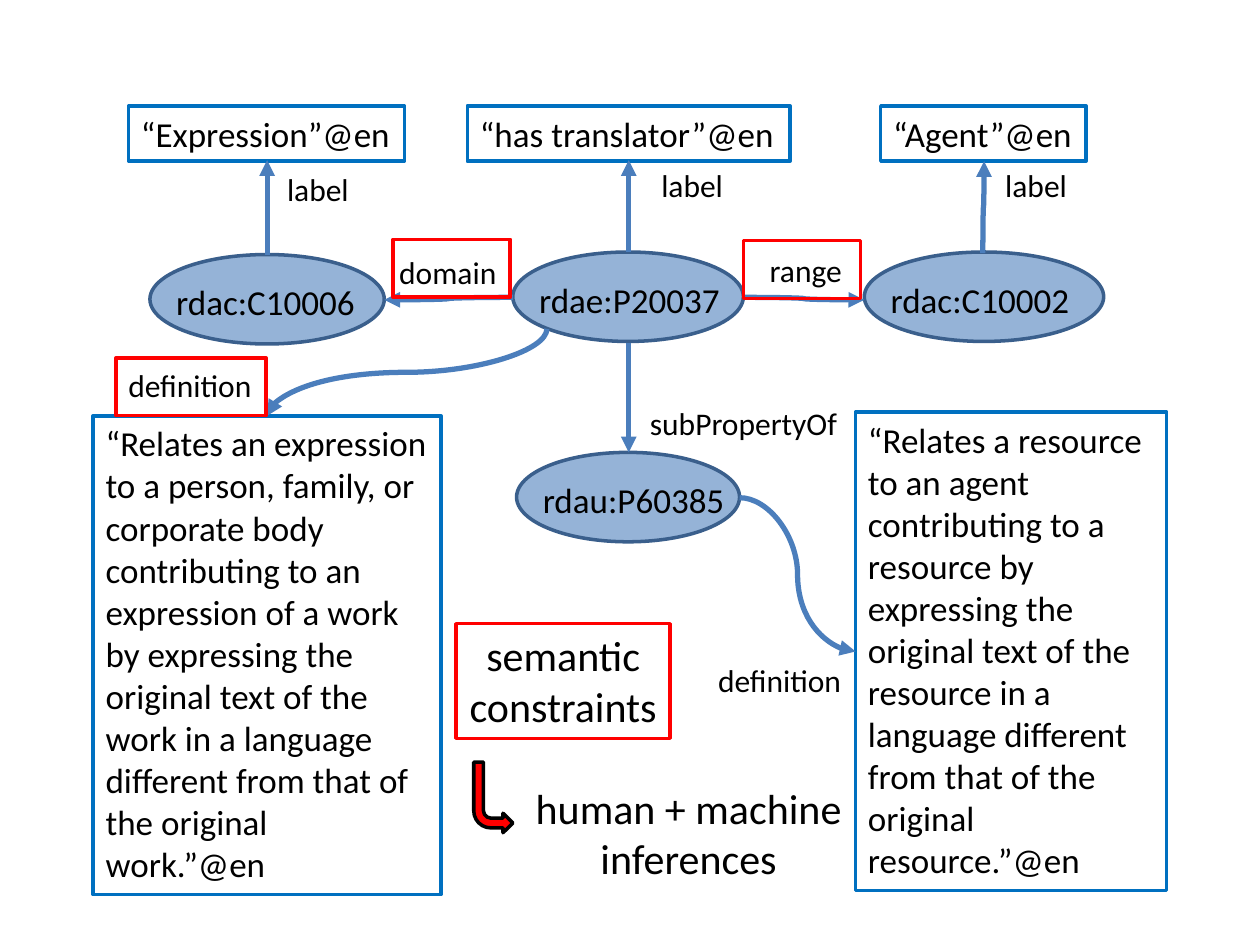
"""Build the RDA property diagram with its semantic constraints."""
from lxml.etree import SubElement
from pptx import Presentation
from pptx.dml.color import RGBColor
from pptx.enum.shapes import MSO_CONNECTOR, MSO_SHAPE
from pptx.enum.text import MSO_ANCHOR, MSO_AUTO_SIZE, PP_ALIGN
from pptx.oxml.ns import qn
from pptx.util import Inches, Pt

BLACK = RGBColor(0x00, 0x00, 0x00)
WHITE = RGBColor(0xFF, 0xFF, 0xFF)
RED = RGBColor(0xFF, 0x00, 0x00)
BLUE = RGBColor(0x00, 0x70, 0xC0)
PALE_BLUE = RGBColor(0x95, 0xB3, 0xD7)
DARK_BLUE = RGBColor(0x3A, 0x5F, 0x8C)
ARROW_BLUE = RGBColor(0x4B, 0x7E, 0xBC)

deck = Presentation()
deck.slide_width, deck.slide_height = Inches(10), Inches(7.5)
COLUMN = deck.slide_width / 100
ROW = deck.slide_height / 75
page = deck.slides.add_slide(deck.slide_layouts[6])


def add_box(text, left, top, width, height, kind=None, fill=None, line=None,
            size=20, wrap=False, align=PP_ALIGN.LEFT):
    place = (round(left * COLUMN), round(top * ROW), round(width * COLUMN), round(height * ROW))
    if kind is None:
        box = page.shapes.add_textbox(*place)
    else:
        box = page.shapes.add_shape(kind, *place)
        box.shadow.inherit = False
        box.line.color.rgb = line
        box.line.width = Pt(2)
        if fill is None:
            box.fill.background()
        else:
            box.fill.solid()
            box.fill.fore_color.rgb = fill
    if text:
        frame = box.text_frame
        frame.text = text
        frame.word_wrap = wrap
        frame.auto_size = MSO_AUTO_SIZE.SHAPE_TO_FIT_TEXT
        frame.vertical_anchor = MSO_ANCHOR.TOP
        for para in frame.paragraphs:
            para.alignment = align
            for span in para.runs:
                span.font.name = "Calibri"
                span.font.size = Pt(size)
                span.font.color.rgb = BLACK
    return box


def add_curve(start_x, start_y, end_x, end_y, upright=False):
    start_x, end_x = start_x * COLUMN, end_x * COLUMN
    start_y, end_y = start_y * ROW, end_y * ROW
    if upright:
        middle_x, middle_y = (start_x + end_x) / 2, (start_y + end_y) / 2
        half_x, half_y = (end_y - start_y) / 2, (start_x - end_x) / 2
        start_x, end_x = middle_x - half_x, middle_x + half_x
        start_y, end_y = middle_y - half_y, middle_y + half_y
    ends = [round(value) for value in (start_x, start_y, end_x, end_y)]
    curve = page.shapes.add_connector(MSO_CONNECTOR.CURVE, *ends)
    curve.line.color.rgb = ARROW_BLUE
    curve.line.width = Pt(3)
    properties = curve._element.spPr
    if upright:
        properties.find(qn("a:xfrm")).set("rot", str(90 * 60000))
    SubElement(properties.find(qn("a:ln")), qn("a:tailEnd"), type="triangle")
    SubElement(properties, qn("a:effectLst"))


for name, left, top, width, text_width in (
    ("rdae:P20037", 40.7, 20, 18.3, 16.5),
    ("rdac:C10002", 68.6, 20, 19, 16.3),
    ("rdac:C10006", 11.9, 20.2, 18.6, 16.3),
    ("rdau:P60385", 41, 35.9, 17.7, 16.6),
):
    add_box("", left, top, width, 7.1, kind=MSO_SHAPE.OVAL, fill=PALE_BLUE, line=DARK_BLUE)
    add_box(name, left + 1.1, top + 1.6, text_width, 4.4)

for literal, left, width in (
    ("“Expression”@en", 10.2, 21.9),
    ("“has translator”@en", 37.1, 25.6),
    ("“Agent”@en", 69.9, 16.3),
):
    add_box(literal, left, 8.4, width, 4.4, kind=MSO_SHAPE.RECTANGLE, fill=WHITE, line=BLUE)

for definition, left, top, width in (
    ("“Relates an expression to a person, family, or corporate body contributing to an "
     "expression of a work by expressing the original text of the work in a language "
     "different from that of the original work.”@en", 7.4, 33, 27.6),
    ("“Relates a resource to an agent contributing to a resource by expressing the "
     "original text of the resource in a language different from that of the original "
     "resource.”@en", 67.9, 32.7, 24.7),
):
    add_box(definition, left, top, width, 38, kind=MSO_SHAPE.RECTANGLE,
            fill=WHITE, line=BLUE, wrap=True)

for start_x, start_y, end_x, end_y, upright in (
    (21.2, 20.2, 21.2, 12.7, True),
    (49.9, 20, 49.9, 12.7, True),
    (78, 20.1, 78.1, 12.8, True),
    (49.9, 27.2, 49.9, 35.9, True),
    (43.4, 26.1, 21.2, 33, True),
    (59, 23.6, 68.6, 23.8, False),
    (40.7, 23.6, 30.5, 23.8, False),
    (58.7, 39.5, 67.9, 51.7, False),
):
    add_curve(start_x, start_y, end_x, end_y, upright=upright)

for label, left, top, width in (
    ("label", 21.8, 13, 7),
    ("label", 51.5, 12.7, 7),
    ("label", 78.8, 12.7, 7),
    ("range", 60.1, 19.4, 7.8),
    ("domain", 30.7, 19.6, 9.8),
    ("subPropertyOf", 50.6, 31.6, 17),
    ("definition", 56, 52, 11.9),
    ("definition", 9.2, 28.6, 11.9),
):
    add_box(label, left, top, width, 4, size=18)

for left, top, width in ((31.2, 19, 9.3), (59, 19.1, 9.3), (9.2, 28.4, 11.9)):
    add_box("", left, top, width, 4.6, kind=MSO_SHAPE.RECTANGLE, line=RED)

add_box("semantic\nconstraints", 36.2, 49.5, 17, 9.1, kind=MSO_SHAPE.RECTANGLE,
        line=RED, size=24, align=PP_ALIGN.CENTER)
add_box("human + machine\ninferences", 41.4, 61.6, 26.5, 9.1, size=24, align=PP_ALIGN.CENTER)
arrow = add_box("", 37.6, 60.5, 3.1, 5.6, kind=MSO_SHAPE.BENT_ARROW, fill=RED, line=BLACK)
arrow._element.spPr.find(qn("a:xfrm")).set("flipV", "1")

deck.save("out.pptx")
